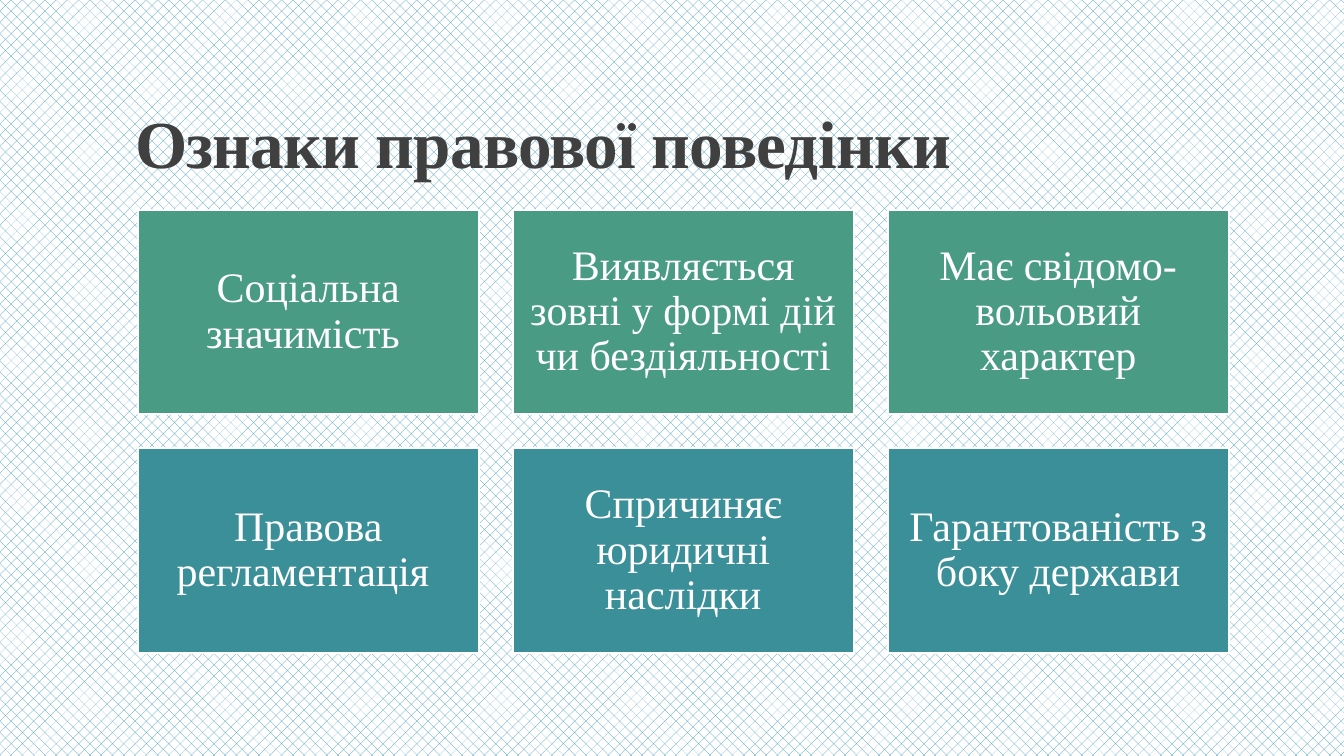
"""Build a slide with a title and a two-row grid of six coloured cards."""
from pptx import Presentation
from pptx.dml.color import RGBColor
from pptx.enum.dml import MSO_PATTERN
from pptx.enum.shapes import MSO_SHAPE as SHAPE
from pptx.enum.text import MSO_ANCHOR as ANCHOR, MSO_AUTO_SIZE as AUTO, PP_ALIGN as ALIGN
from pptx.util import Pt

TITLE = "Ознаки правової поведінки"
ROWS = [
    ("4A9B83", ["Соціальна значимість ",
                "Виявляється зовні у формі дій чи бездіяльності",
                "Має свідомо-вольовий характер"]),
    ("3A8F98", ["Правова регламентація ",
                "Спричиняє юридичні наслідки",
                "Гарантованість з боку держави"]),
]
FONT = "Times New Roman"
LEFT, TOP = 98.5, 149.75
CARD_W, CARD_H = 243.5, 146.1
GAP = 24.35
INSET = 8.64


def rgb(color):
    return RGBColor.from_string(color)


def style(p, size, color, align, spacing):
    p.alignment, p.line_spacing = align, spacing
    p.font.name, p.font.size = FONT, Pt(size)
    p.font.color.rgb = rgb(color)


def add_title(s):
    sp = s.shapes.title
    sp.left, sp.top, sp.width, sp.height = Pt(89.3), Pt(44.6), Pt(746), Pt(89.3)
    tf = sp.text_frame
    tf.text, tf.vertical_anchor = TITLE, ANCHOR.BOTTOM
    tf.auto_size = AUTO.NONE
    p = tf.paragraphs[0]
    style(p, 48, "404040", ALIGN.LEFT, 0.85)
    p.font.bold = True
    p.runs[0].font._element.set("spc", "-50")


def add_card(s, x, y, color, text):
    sp = s.shapes.add_shape(SHAPE.RECTANGLE, Pt(x), Pt(y), Pt(CARD_W), Pt(CARD_H))
    sp.shadow.inherit = False
    sp.fill.solid()
    sp.fill.fore_color.rgb = rgb(color)
    sp.line.color.rgb, sp.line.width = rgb("FFFFFF"), Pt(1.5)
    tf = sp.text_frame
    tf.word_wrap, tf.vertical_anchor = True, ANCHOR.MIDDLE
    tf.margin_left = tf.margin_right = tf.margin_top = tf.margin_bottom = Pt(INSET)
    tf.text = text
    style(tf.paragraphs[0], 30, "FFFFFF", ALIGN.CENTER, 0.9)


def main():
    prs = Presentation()
    prs.slide_width, prs.slide_height = Pt(960), Pt(540)
    s = prs.slides.add_slide(prs.slide_layouts[5])
    fill = s.background.fill
    fill.patterned()
    fill.pattern = MSO_PATTERN.PERCENT_25
    fill.fore_color.rgb, fill.back_color.rgb = rgb("3494BA"), rgb("FFFFFF")
    add_title(s)
    for row, (color, texts) in enumerate(ROWS):
        for col, text in enumerate(texts):
            add_card(s, LEFT + col * (CARD_W + GAP), TOP + row * (CARD_H + GAP), color, text)
    prs.save("out.pptx")


if __name__ == "__main__":
    main()
